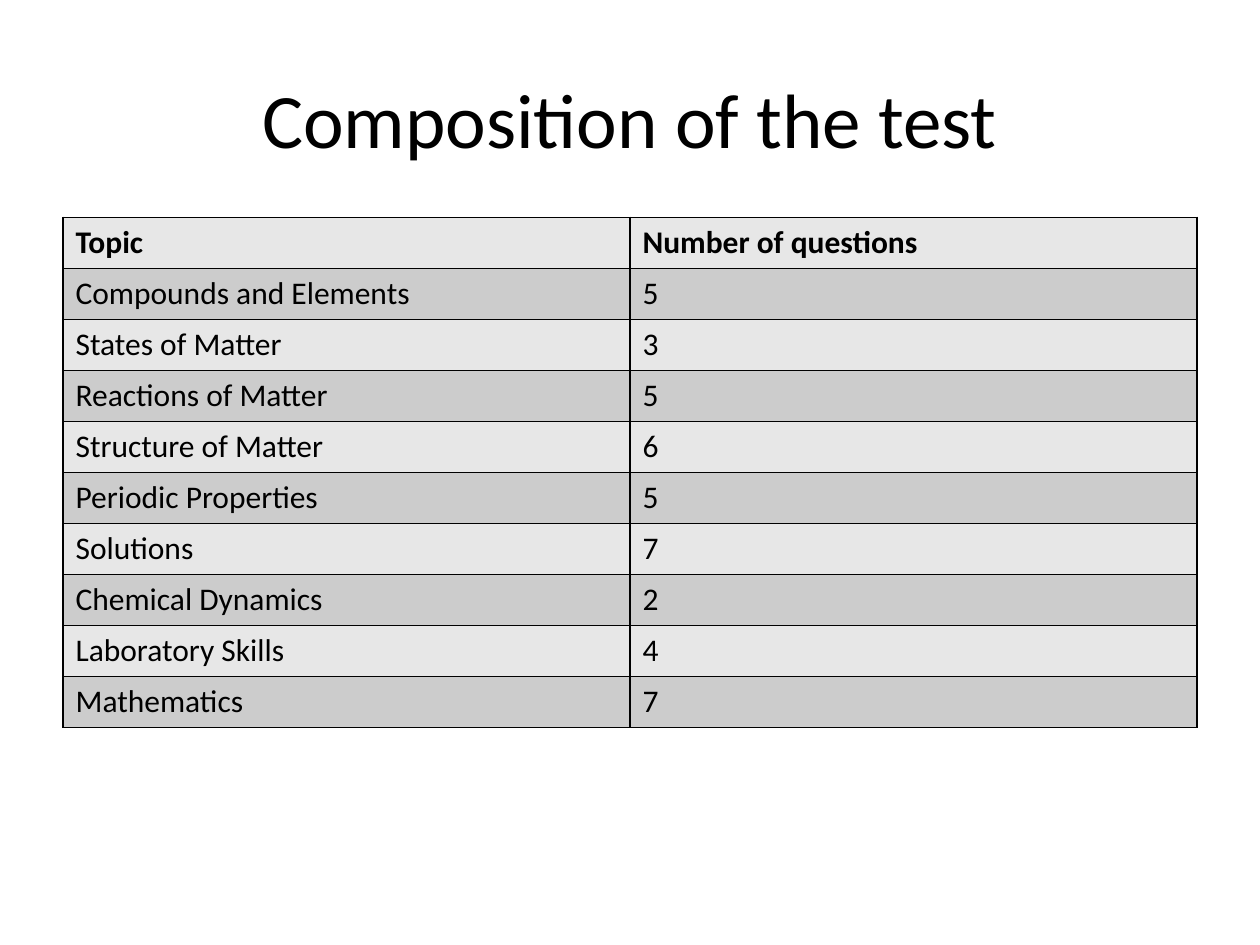
from dataclasses import dataclass

from lxml.etree import SubElement
from pptx import Presentation
from pptx.dml.color import RGBColor
from pptx.enum.text import MSO_ANCHOR, PP_ALIGN
from pptx.oxml.ns import qn
from pptx.util import Inches, Pt


@dataclass(frozen=True)
class Theme:
    font: str = "Calibri"
    ink: str = "000000"
    bands: tuple = ("E7E7E7", "CCCCCC")
    title_size: int = 44
    table_size: int = 18
    border_width: int = 1


TOPICS = [
    ("Topic", "Number of questions"),
    ("Compounds and Elements", "5"),
    ("States of Matter", "3"),
    ("Reactions of Matter", "5"),
    ("Structure of Matter", "6"),
    ("Periodic Properties", "5"),
    ("Solutions", "7"),
    ("Chemical Dynamics", "2"),
    ("Laboratory Skills", "4"),
    ("Mathematics", "7"),
]


class SlideBuilder:
    """Places styled elements on a slide by shares of its width and height."""

    def __init__(self, deck, theme):
        self.theme = theme
        self.width, self.height = deck.slide_width, deck.slide_height
        self.slide = deck.slides.add_slide(deck.slide_layouts[6])

    def area(self, left, top, width, height):
        return (int(left * self.width), int(top * self.height),
                int(width * self.width), int(height * self.height))

    def set_text(self, frame, text, size, bold=False, align=PP_ALIGN.LEFT):
        para = frame.paragraphs[0]
        para.text = text
        para.alignment = align
        para.font.name = self.theme.font
        para.font.size = Pt(size)
        para.font.bold = bold
        para.font.color.rgb = RGBColor.from_string(self.theme.ink)

    def title(self, text, *shares):
        box = self.slide.shapes.add_textbox(*self.area(*shares))
        frame = box.text_frame
        frame.word_wrap = True
        frame.vertical_anchor = MSO_ANCHOR.MIDDLE
        self.set_text(frame, text, self.theme.title_size, align=PP_ALIGN.CENTER)

    def outline(self, cell):
        properties = cell._tc.get_or_add_tcPr()
        for side in ("a:lnL", "a:lnR", "a:lnT", "a:lnB"):
            line = SubElement(properties, qn(side), w=str(Pt(self.theme.border_width)))
            fill = SubElement(line, qn("a:solidFill"))
            SubElement(fill, qn("a:srgbClr"), val=self.theme.ink)

    def table(self, records, *shares):
        """Adds a table of equal rows and columns with a bold first row."""
        table = self.slide.shapes.add_table(
            len(records), len(records[0]), *self.area(*shares)).table
        for row, record in enumerate(records):
            band = self.theme.bands[row % len(self.theme.bands)]
            for column, text in enumerate(record):
                cell = table.cell(row, column)
                self.outline(cell)
                cell.fill.solid()
                cell.fill.fore_color.rgb = RGBColor.from_string(band)
                self.set_text(cell.text_frame, text, self.theme.table_size, bold=row == 0)


def main():
    deck = Presentation()
    deck.slide_width, deck.slide_height = Inches(10), Inches(7.5)
    builder = SlideBuilder(deck, Theme())
    builder.title("Composition of the test", 0.05, 0.04, 0.9, 0.17)
    builder.table(TOPICS, 0.05, 0.23, 0.9, 0.54)
    deck.save("out.pptx")


if __name__ == "__main__":
    main()
